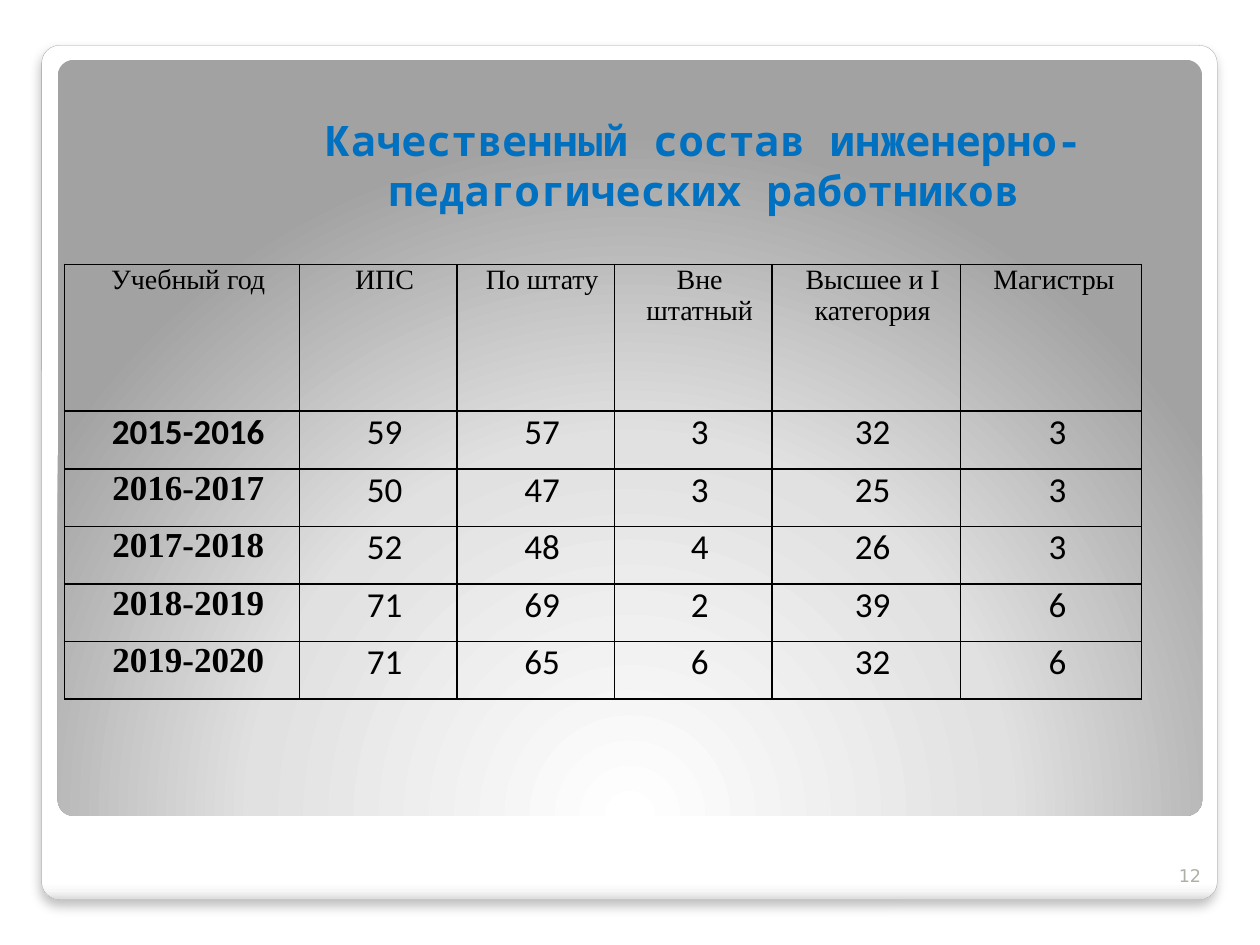
from lxml import etree
from pptx import Presentation
from pptx.dml.color import RGBColor
from pptx.enum.shapes import MSO_SHAPE
from pptx.enum.text import MSO_ANCHOR, PP_ALIGN
from pptx.oxml import parse_xml
from pptx.oxml.ns import nsdecls, qn
from pptx.util import Pt

ROUNDED = MSO_SHAPE.ROUNDED_RECTANGLE
BOTTOM = MSO_ANCHOR.BOTTOM
CENTER, RIGHT = PP_ALIGN.CENTER, PP_ALIGN.RIGHT
BLACK = RGBColor(0x00, 0x00, 0x00)
BLUE = RGBColor(0x00, 0x70, 0xC0)
EDGE_GRAY = RGBColor(0xA4, 0xA4, 0xA4)
NUMBER_GRAY = RGBColor(0xB0, 0xAF, 0xA6)

HEADINGS = ["Учебный год", "ИПС", "По штату", "Вне штатный",
            "Высшее и I категория", "Магистры "]
STAFF_BY_YEAR = [
    ["2015-2016", 59, 57, 3, 32, 3],
    ["2016-2017", 50, 47, 3, 25, 3],
    ["2017-2018", 52, 48, 4, 26, 3],
    ["2018-2019", 71, 69, 2, 39, 6],
    ["2019-2020", 71, 65, 6, 32, 6],
]
COLUMN_WIDTHS = [134.4, 90, 90, 90, 107.8, 103.4]
HEADING_HEIGHT, YEAR_HEIGHT = 84, 32.9

prs = Presentation()
prs.slide_width, prs.slide_height = Pt(720), Pt(540)
slide = prs.slides.add_slide(prs.slide_layouts[5])


def add_panel(left, top, width, height, stops, direction):
    """Add a rounded panel with a gradient of (percent, colour) stops."""
    panel = slide.shapes.add_shape(ROUNDED, Pt(left), Pt(top), Pt(width), Pt(height))
    panel.adjustments[0] = 0.021
    panel.shadow.inherit = False
    stop_xml = "".join(f'<a:gs pos="{percent * 1000}"><a:srgbClr val="{color}"/></a:gs>'
                       for percent, color in stops)
    gradient = parse_xml(f'<a:gradFill {nsdecls("a")} rotWithShape="1">'
                         f'<a:gsLst>{stop_xml}</a:gsLst>{direction}</a:gradFill>')
    panel._element.spPr.find(qn("a:prstGeom")).addnext(gradient)
    return panel


# White card with a soft shadow
card = add_panel(23.8, 25.9, 671.8, 488.2,
                 [(0, "FFFFFF"), (98, "FFFFFF"), (99, "F7F7F7"), (100, "DADADA")],
                 '<a:lin ang="5400000" scaled="0"/>')
card.line.color.rgb = EDGE_GRAY
card.line.width = Pt(0.16)
card._element.spPr.find(qn("a:effectLst")).append(parse_xml(
    f'<a:outerShdw {nsdecls("a")} blurRad="{Pt(6)}" dist="{Pt(4)}" dir="5400000" '
    'algn="t" rotWithShape="0"><a:srgbClr val="000000"><a:alpha val="25000"/>'
    '</a:srgbClr></a:outerShdw>'))

# Gray panel lit from below
backdrop = add_panel(33, 34.2, 654, 432,
                     [(0, "FFFFFF"), (55, "E1E1E1"), (100, "A2A2A2")],
                     '<a:path path="circle"><a:fillToRect l="50000" t="175000" '
                     'r="50000" b="-75000"/></a:path>')
backdrop.line.fill.background()

# Staff table
rows = [HEADINGS] + STAFF_BY_YEAR
staff = slide.shapes.add_table(
    len(rows), len(HEADINGS), Pt(36.8), Pt(151), Pt(sum(COLUMN_WIDTHS)),
    Pt(HEADING_HEIGHT + YEAR_HEIGHT * len(STAFF_BY_YEAR))).table
staff.first_row = staff.horz_banding = False
for column, width in zip(staff.columns, COLUMN_WIDTHS):
    column.width = Pt(width)
for r, values in enumerate(rows):
    staff.rows[r].height = Pt(YEAR_HEIGHT if r else HEADING_HEIGHT)
    for c, value in enumerate(values):
        cell = staff.cell(r, c)
        cell.margin_left = cell.margin_right = Pt(5)
        cell.margin_top = cell.margin_bottom = 0
        cell.text = str(value)
        paragraph = cell.text_frame.paragraphs[0]
        paragraph.alignment = CENTER
        paragraph._p.get_or_add_pPr().set("marL", str(Pt(7.2)))
        font = paragraph.font
        font.size = Pt(20 if r else 16)
        font.bold = r > 0 and c == 0
        font.color.rgb = BLACK
        font.name = "Times New Roman" if r == 0 or (c == 0 and r > 1) else "Calibri"
        # Borders come before the fill in the cell properties
        tc_pr = cell._tc.get_or_add_tcPr()
        for side in ("lnL", "lnR", "lnT", "lnB"):
            border = etree.SubElement(tc_pr, qn(f"a:{side}"), w=str(Pt(1)))
            border_fill = etree.SubElement(border, qn("a:solidFill"))
            etree.SubElement(border_fill, qn("a:srgbClr"), val=str(BLACK))
        cell.fill.background()

# Title, brought in front of the panels
title = slide.shapes.title
slide.shapes._spTree.append(title._element)
title.left, title.top, title.width, title.height = Pt(123.8), Pt(28.1), Pt(556.6), Pt(98.6)
title.text_frame.text = "Качественный состав инженерно-педагогических работников"
title.text_frame.vertical_anchor = BOTTOM
heading = title.text_frame.paragraphs[0]
heading.alignment = CENTER
heading.font.name = "Noto Sans Mono"
heading.font.size = Pt(24)
heading.font.bold = True
heading.font.color.rgb = BLUE

# Slide number
number_frame = slide.shapes.add_textbox(Pt(657.4), Pt(481), Pt(36), Pt(28.8)).text_frame
number_frame.word_wrap = True
number_frame.vertical_anchor = BOTTOM
number_frame.text = "12"
number = number_frame.paragraphs[0]
number.alignment = RIGHT
number.font.name = "DejaVu Sans"
number.font.size = Pt(10)
number.font.color.rgb = NUMBER_GRAY

prs.save("out.pptx")
